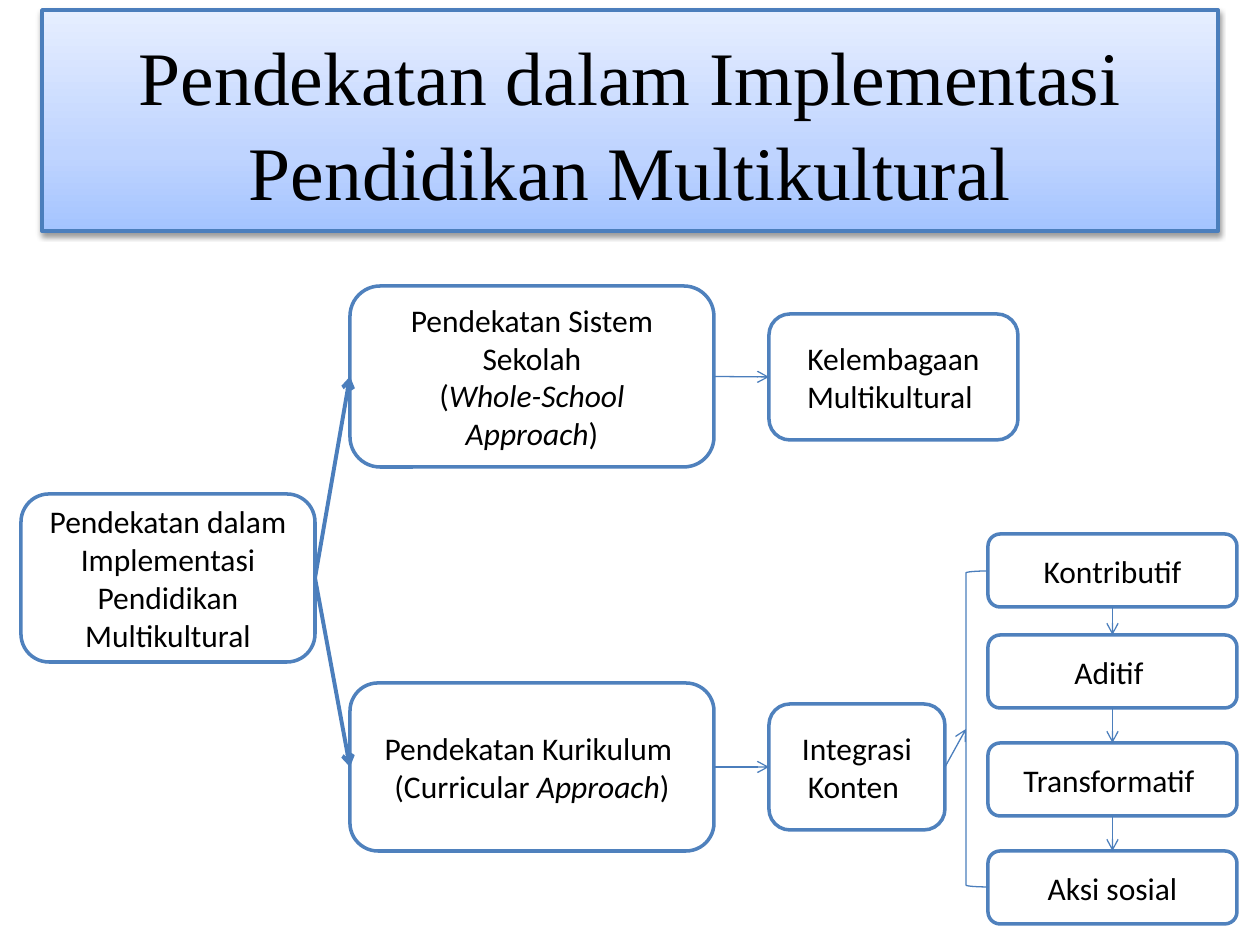
from copy import deepcopy
from itertools import pairwise
from typing import NamedTuple

from lxml import etree
from pptx import Presentation
from pptx import util as u
from pptx.dml.color import RGBColor
from pptx.enum import shapes, text
from pptx.oxml.ns import qn

PX_PER_INCH = 126
WHITE = RGBColor(0xFF, 0xFF, 0xFF)
BLACK = RGBColor(0x00, 0x00, 0x00)
BOX_BLUE = RGBColor(0x4F, 0x81, 0xBD)
LINE_BLUE = RGBColor(0x4B, 0x7E, 0xBC)
TITLE_STOPS = (
    (0, RGBColor(0xA4, 0xC4, 0xFF)),
    (0.35, RGBColor(0xBF, 0xD4, 0xFF)),
    (1, RGBColor(0xE6, 0xEE, 0xFF)),
)
LEFT, BOTTOM, TOP, RIGHT = 1, 2, 0, 3
ITALIC_MARK = "_"


class Box(NamedTuple):
    left: int
    top: int
    width: int
    height: int
    paragraphs: tuple[str, ...] = ()


TITLE = Box(42, 10, 1176, 221, ("Pendekatan dalam Implementasi Pendidikan Multikultural",))
ROOT = Box(21, 494, 294, 168, TITLE.paragraphs)
CURRICULUM = Box(350, 683, 364, 168, ("Pendekatan Kurikulum ", "(Curricular _Approach_)"))
SCHOOL = Box(350, 286, 364, 181, ("Pendekatan Sistem Sekolah", "(_Whole-School Approach_)"))
INSTITUTION = Box(769, 314, 249, 126, ("Kelembagaan Multikultural ",))
CONTENT = Box(769, 704, 176, 126, ("Integrasi Konten ",))
STAGES = [
    Box(988, top, 249, 73, (name,))
    for top, name in (
        (534, "Kontributif"),
        (635, "Aditif "),
        (743, "Transformatif "),
        (851, "Aksi sosial"),
    )
]
BRACKET = Box(966, 571, 23, 316)


def px(length: int) -> int:
    return round(length * u.Inches(1) / PX_PER_INCH)


def add_outline(slide, box: Box, kind, color: RGBColor, weight: float):
    shape = slide.shapes.add_shape(kind, *(px(length) for length in box[:4]))
    shape.shadow.inherit = False
    shape.line.color.rgb = color
    shape.line.width = u.Pt(weight)
    return shape


def write(shape, paragraphs: tuple[str, ...], font: str, size: float) -> None:
    frame = shape.text_frame
    frame.word_wrap = True
    frame.vertical_anchor = text.MSO_ANCHOR.MIDDLE
    for index, words in enumerate(paragraphs):
        paragraph = frame.add_paragraph() if index else frame.paragraphs[0]
        paragraph.alignment = text.PP_ALIGN.CENTER
        for position, part in enumerate(words.split(ITALIC_MARK)):
            run = paragraph.add_run()
            run.text = part
            run.font.name = font
            run.font.size = u.Pt(size)
            run.font.color.rgb = BLACK
            if position % 2:
                run.font.italic = True


def add_box(slide, box: Box):
    shape = add_outline(slide, box, shapes.MSO_SHAPE.ROUNDED_RECTANGLE, BOX_BLUE, 2)
    shape.fill.solid()
    shape.fill.fore_color.rgb = WHITE
    write(shape, box.paragraphs, "Calibri", 18)
    return shape


def add_title(slide) -> None:
    shape = add_outline(slide, TITLE, shapes.MSO_SHAPE.ROUNDED_RECTANGLE, LINE_BLUE, 2.25)
    shape.adjustments[0] = 0
    shape.fill.gradient()
    shape.fill.gradient_angle = 90
    stop_list = shape.element.spPr.find(".//" + qn("a:gsLst"))
    stop_list.append(deepcopy(stop_list[0]))
    for stop, (position, color) in zip(shape.fill.gradient_stops, TITLE_STOPS):
        stop.position = position
        stop.color.rgb = color
    effects = shape.element.spPr.find(qn("a:effectLst"))
    shadow = etree.SubElement(
        effects, qn("a:outerShdw"), blurRad=str(u.Pt(3.1)), dist=str(u.Pt(1.6)),
        dir="5400000", rotWithShape="0",
    )
    color = etree.SubElement(shadow, qn("a:srgbClr"), val=str(BLACK))
    etree.SubElement(color, qn("a:alpha"), val="38000")
    write(shape, TITLE.paragraphs, "Times New Roman", 43.2)
    shape.text_frame.paragraphs[0].line_spacing = 1.05


def add_arrow(slide, start, end, weight: float = 0.75,
              start_side: int = RIGHT, end_side: int = LEFT) -> None:
    arrow = slide.shapes.add_connector(shapes.MSO_CONNECTOR.STRAIGHT, 0, 0, 0, 0)
    arrow.begin_connect(start, start_side)
    arrow.end_connect(end, end_side)
    arrow.line.color.rgb = LINE_BLUE
    arrow.line.width = u.Pt(weight)
    properties = arrow.element.spPr
    etree.SubElement(properties.find(qn("a:ln")), qn("a:tailEnd"), type="arrow")
    etree.SubElement(properties, qn("a:effectLst"))


def main() -> None:
    presentation = Presentation()
    presentation.slide_width = u.Inches(10)
    presentation.slide_height = u.Inches(7.5)
    slide = presentation.slides.add_slide(presentation.slide_layouts[6])

    add_title(slide)
    root, curriculum, school, institution, content = (
        add_box(slide, box) for box in (ROOT, CURRICULUM, SCHOOL, INSTITUTION, CONTENT)
    )
    stages = [add_box(slide, stage) for stage in STAGES]
    bracket = add_outline(slide, BRACKET, shapes.MSO_SHAPE.LEFT_BRACKET, LINE_BLUE, 0.75)
    bracket.fill.background()

    for approach in (school, curriculum):
        add_arrow(slide, root, approach, weight=2.25)
    for start, end in ((school, institution), (curriculum, content), (content, bracket)):
        add_arrow(slide, start, end)
    for upper, lower in pairwise(stages):
        add_arrow(slide, upper, lower, start_side=BOTTOM, end_side=TOP)

    presentation.save("out.pptx")


if __name__ == "__main__":
    main()
